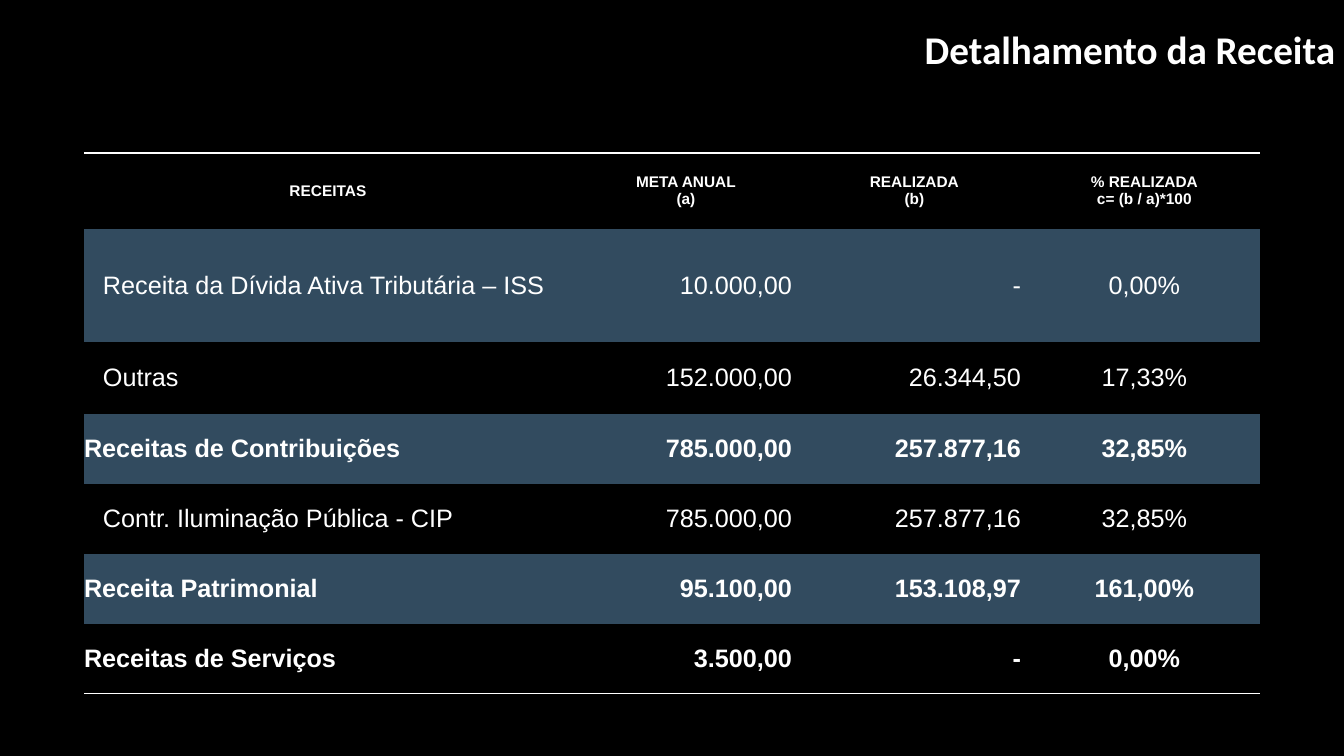
import pptx
import pptx.dml.color
import pptx.enum.text
import pptx.oxml
import pptx.oxml.ns
import pptx.util

PX = 914400 / 100.8
WHITE = pptx.dml.color.RGBColor(0xFF, 0xFF, 0xFF)
BLACK = pptx.dml.color.RGBColor(0x00, 0x00, 0x00)
BAND = pptx.dml.color.RGBColor(0x32, 0x4B, 0x5F)
ALIGN = pptx.enum.text.PP_ALIGN
NO_STYLE = "{2D5ABB26-0587-4C30-8999-92F81FD0307C}"


def px(n):
    return pptx.util.Emu(round(n * PX))


def add_rule(cell, side):
    ln = pptx.oxml.parse_xml(
        f'<a:{side} {pptx.oxml.ns.nsdecls("a")} w="12700"><a:solidFill>'
        f'<a:srgbClr val="{WHITE}"/></a:solidFill></a:{side}>')
    cell._tc.get_or_add_tcPr().append(ln)


prs = pptx.Presentation()
prs.slide_width, prs.slide_height = px(1344), px(756)
s = prs.slides.add_slide(prs.slide_layouts[6])
s.background.fill.solid()
s.background.fill.fore_color.rgb = BLACK

# Title
tf = s.shapes.add_textbox(px(495), px(20), px(850), px(57)).text_frame
tf.word_wrap = True
p = tf.paragraphs[0]
p.text = "Detalhamento da Receita"
p.alignment = ALIGN.RIGHT
p.font.name, p.font.size, p.font.bold = "Calibri", pptx.util.Pt(28), True
p.font.color.rgb = WHITE

# Table content: totals are bold, their items are indented
rows = [
    ("RECEITAS", "META ANUAL\n(a)", "REALIZADA\n(b)", "% REALIZADA\nc= (b / a)*100"),
    ("Receita da Dívida Ativa Tributária – ISS", "10.000,00", "-", "0,00%"),
    ("Outras", "152.000,00", "26.344,50", "17,33%"),
    ("Receitas de Contribuições", "785.000,00", "257.877,16", "32,85%"),
    ("Contr. Iluminação Pública - CIP", "785.000,00", "257.877,16", "32,85%"),
    ("Receita Patrimonial", "95.100,00", "153.108,97", "161,00%"),
    ("Receitas de Serviços", "3.500,00", "-", "0,00%"),
]
total_rows = {3, 5, 6}
widths = [488, 228, 229, 231]
heights = [76, 113, 72, 70, 70, 70, 70]
aligns = [ALIGN.LEFT, ALIGN.RIGHT, ALIGN.RIGHT, ALIGN.CENTER]

# Table frame
table = s.shapes.add_table(len(rows), len(widths), px(84), px(153),
                           px(sum(widths)), px(sum(heights))).table
table.first_row = table.horz_banding = False
table._tbl.tblPr.find(pptx.oxml.ns.qn("a:tableStyleId")).text = NO_STYLE
for col, width in zip(table.columns, widths):
    col.width = px(width)
for row, height in zip(table.rows, heights):
    row.height = px(height)

# Table cells
for i, texts in enumerate(rows):
    header = i == 0
    for j, text in enumerate(texts):
        cell = table.cell(i, j)
        cell.margin_top = cell.margin_bottom = 0
        item = j == 0 and not header and i not in total_rows
        cell.margin_left = px(19 if item else 0)
        cell.margin_right = px(8 if aligns[j] == ALIGN.RIGHT and not header else 0)
        cell.vertical_anchor = pptx.enum.text.MSO_ANCHOR.MIDDLE
        if header:
            add_rule(cell, "lnT")
        if i == len(rows) - 1:
            add_rule(cell, "lnB")
        if i % 2:
            cell.fill.solid()
            cell.fill.fore_color.rgb = BAND
        else:
            cell.fill.background()
        cell.text = text
        for p in cell.text_frame.paragraphs:
            p.alignment = ALIGN.CENTER if header else aligns[j]
            p.font.name = "Arial"
            p.font.size = pptx.util.Pt(11 if header else 18)
            p.font.bold = header or i in total_rows
            p.font.color.rgb = WHITE

prs.save("out.pptx")
